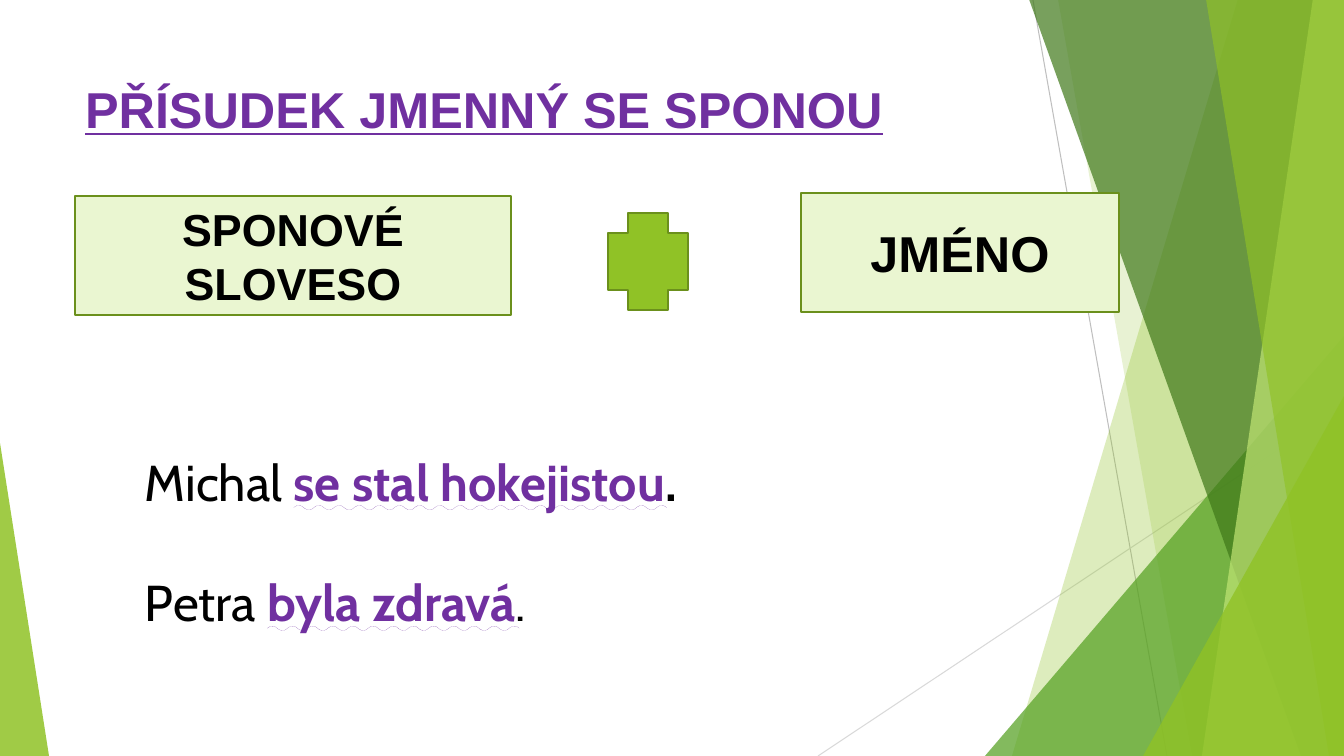
"""Build a Czech grammar slide on the nominal predicate with a copula."""
from lxml import etree
from pptx import Presentation
from pptx.dml.color import RGBColor
from pptx.enum.shapes import MSO_CONNECTOR, MSO_SHAPE
from pptx.enum.text import MSO_ANCHOR, MSO_AUTO_SIZE, MSO_UNDERLINE, PP_ALIGN
from pptx.oxml.ns import qn
from pptx.util import Pt

RECT, PLUS, TRI = MSO_SHAPE.RECTANGLE, MSO_SHAPE.CROSS, MSO_SHAPE.ISOSCELES_TRIANGLE
WAVY = MSO_UNDERLINE.WAVY_LINE
LEFT, MID = PP_ALIGN.LEFT, PP_ALIGN.CENTER
W, H = 1344, 756
PX = 12192000 / W

HEX = {"lime": "90C226", "green": "54A021", "dark": "3F7819", "light": "C0E474",
       "pale": "EAF6D1", "edge": "6B901C", "violet": "7030A0", "black": "000000",
       "grey": "BFBFBF", "mist": "D9D9D9"}

TITLE = "PŘÍSUDEK JMENNÝ SE SPONOU"
BOXES = [("JMÉNO", 36, (801, 193, 318, 119)),
         ("SPONOVÉ SLOVESO", 32, (75, 196, 436, 119))]
CROSS = (608, 213, 80, 97)
LINES = [("Michal ", "se stal hokejistou", ".", True),
         ("Petra ", "byla zdravá", ".", False)]
RAYS = [("grey", (1033, 0, 1167, H)), ("mist", (W, 406, 818, H))]
BANDS = [("lime", 30, (1238, 1012)),
         ("lime", 20, (1058, 1192)),
         ("green", 72, (985, 336, 359, 420)),
         ("dark", 70, (1029, 1301)),
         ("light", 70, (1313, 1202)),
         ("lime", 65, (1206, 1329)),
         ("lime", 80, (1143, 396, 201, 360)),
         ("lime", 85, (0, 443, 49, 313))]


def emu(nums):
    return [round(n * PX) for n in nums]


def paint(shape, fill, edge=None, alpha=100):
    shape.shadow.inherit = False
    shape.fill.solid()
    shape.fill.fore_color.rgb = RGBColor.from_string(HEX[fill])
    if alpha < 100:
        tint = shape.fill._xPr.find(".//" + qn("a:srgbClr"))
        etree.SubElement(tint, qn("a:alpha"), val=str(alpha * 1000))
    if edge:
        shape.line.color.rgb = RGBColor.from_string(HEX[edge])
        shape.line.width = Pt(1.5)
    else:
        shape.line.fill.background()


def style(run, size, face, hue, bold=False, under=None):
    font = run.font
    font.size, font.name, font.bold, font.underline = Pt(size), face, bold, under
    font.color.rgb = RGBColor.from_string(HEX[hue])


def add_ray(shapes, hue, ends):
    ray = shapes.add_connector(MSO_CONNECTOR.STRAIGHT, *emu(ends))
    ray.line.color.rgb = RGBColor.from_string(HEX[hue])
    ray.line.width = Pt(0.75)
    etree.SubElement(ray._element.spPr, qn("a:effectLst"))


def add_band(shapes, hue, alpha, dims):
    if len(dims) == 2:
        top, foot = dims
        pen = shapes.build_freeform(top, -1, scale=PX)
        pen.add_line_segments([(W, -1), (W, H), (foot, H)], close=True)
        band = pen.convert_to_shape()
    else:
        band = shapes.add_shape(TRI, *emu(dims))
        band.adjustments[0] = 1 if dims[0] else 0
    paint(band, hue, alpha=alpha)


def add_title(title):
    title.left, title.top, title.width, title.height = emu((75, 68, 947, 145))
    frame = title.text_frame
    frame.text = TITLE
    frame.auto_size = MSO_AUTO_SIZE.NONE
    frame.vertical_anchor = MSO_ANCHOR.TOP
    frame.margin_top = round(10 * PX)
    para = frame.paragraphs[0]
    para.alignment = LEFT
    style(para.runs[0], 36, "Arial", "violet", True, True)


def add_box(shapes, text, size, dims):
    box = shapes.add_shape(RECT, *emu(dims))
    paint(box, "pale", "edge")
    frame = box.text_frame
    frame.text = text
    frame.word_wrap = True
    frame.vertical_anchor = MSO_ANCHOR.MIDDLE
    para = frame.paragraphs[0]
    para.alignment = MID
    style(para.runs[0], size, "Arial", "black", True)


def add_lines(shapes):
    frame = shapes.add_textbox(*emu((135, 446, 1024, 194))).text_frame
    frame.word_wrap = True
    for i, (noun, verb, dot, bold) in enumerate(LINES):
        para = frame.add_paragraph() if i else frame.paragraphs[0]
        para.space_before = Pt(43 * i)
        looks = [(noun, "black", False, None), (verb, "violet", True, WAVY),
                 (dot, "black", bold, None)]
        for text, hue, heavy, under in looks:
            run = para.add_run()
            run.text = text
            style(run, 36, "Cabin", hue, heavy, under)


def main():
    deck = Presentation()
    deck.slide_width, deck.slide_height = emu((W, H))
    shapes = deck.slides.add_slide(deck.slide_layouts[5]).shapes
    for ray in RAYS:
        add_ray(shapes, *ray)
    for band in BANDS:
        add_band(shapes, *band)
    add_title(shapes.title)
    for box in BOXES:
        add_box(shapes, *box)
    add_lines(shapes)
    paint(shapes.add_shape(PLUS, *emu(CROSS)), "lime", "edge")
    deck.save("out.pptx")


if __name__ == "__main__":
    main()
